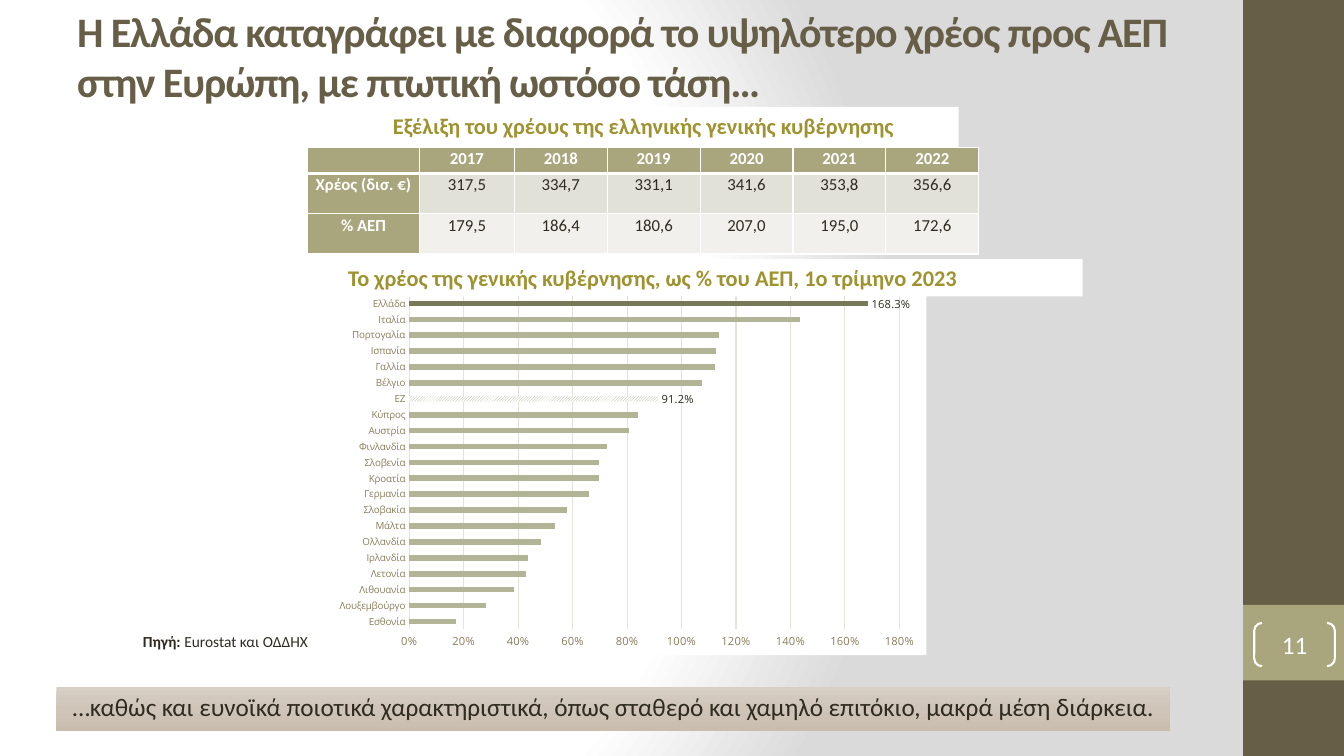
from lxml import etree
from pptx import Presentation
from pptx.chart.data import CategoryChartData
from pptx.dml.color import RGBColor
from pptx.enum.chart import XL_CHART_TYPE, XL_LABEL_POSITION, XL_TICK_MARK
from pptx.enum.dml import MSO_PATTERN
from pptx.enum.shapes import MSO_SHAPE
from pptx.enum.text import MSO_ANCHOR, PP_ALIGN
from pptx.oxml import parse_xml
from pptx.oxml.ns import qn
from pptx.util import Inches, Pt

RECT, BRACKET = MSO_SHAPE.RECTANGLE, MSO_SHAPE.DOUBLE_BRACKET
LEFT, CENTER = PP_ALIGN.LEFT, PP_ALIGN.CENTER
TOP, MIDDLE = MSO_ANCHOR.TOP, MSO_ANCHOR.MIDDLE
BAR, OUTSIDE = XL_CHART_TYPE.BAR_CLUSTERED, XL_LABEL_POSITION.OUTSIDE_END
NO_TICK, HATCH = XL_TICK_MARK.NONE, MSO_PATTERN.DARK_UPWARD_DIAGONAL
WIDTH, HEIGHT = Inches(13.333), Inches(7.5)
A_NS = 'xmlns:a="http://schemas.openxmlformats.org/drawingml/2006/main"'
C_NS = 'xmlns:c="http://schemas.openxmlformats.org/drawingml/2006/chart"'
WHITE, DARK, BROWN, KHAKI, OLIVE = "FFFFFF", "2F2B20", "675E47", "A9A57C", "9E9330"
SAGE, MOSS, TAUPE, GRID = "B1B595", "767A56", "897D5D", "E5E2D9"

YEARS = ["", "2017", "2018", "2019", "2020", "2021", "2022"]
ROWS = [
    YEARS,
    ["Χρέος (δισ. €)", "317,5", "334,7", "331,1", "341,6", "353,8", "356,6"],
    ["% ΑΕΠ", "179,5", "186,4", "180,6", "207,0", "195,0", "172,6"],
]
DEBT = {
    "Εσθονία": 0.172, "Λουξεμβούργο": 0.28, "Λιθουανία": 0.384, "Λετονία": 0.429,
    "Ιρλανδία": 0.435, "Ολλανδία": 0.483, "Μάλτα": 0.536, "Σλοβακία": 0.579,
    "Γερμανία": 0.659, "Κροατία": 0.695, "Σλοβενία": 0.695, "Φινλανδία": 0.725,
    "Αυστρία": 0.806, "Κύπρος": 0.84, "ΕΖ": 0.912, "Βέλγιο": 1.074,
    "Γαλλία": 1.124, "Ισπανία": 1.128, "Πορτογαλία": 1.138, "Ιταλία": 1.435,
    "Ελλάδα": 1.683,
}


def rgb(code):
    return RGBColor.from_string(code)


def place(box):
    """Turn percent shares of the slide into lengths."""
    x, y, w, h = box
    return [int(n * full / 100) for n, full in ((x, WIDTH), (y, HEIGHT), (w, WIDTH), (h, HEIGHT))]


def style(font, size, color, bold=False, face="Calibri"):
    font.size, font.bold, font.name = Pt(size), bold, face
    font.color.rgb = rgb(color)


def write(frame, text, size=18, color=DARK, bold=False, lead="", align=LEFT,
          anchor=TOP, space=None, before=None, after=None, track=0):
    """Fill a frame with one paragraph; lead is a bold opening."""
    frame.word_wrap, frame.vertical_anchor = True, anchor
    par = frame.paragraphs[0]
    par.alignment, par.line_spacing = align, space
    par.space_before, par.space_after = before, after
    for part, heavy in ((lead, True), (text, bold)):
        if part:
            run = par.add_run()
            run.text = part
            style(run.font, size, color, heavy)
            if track:
                run.font._element.set("spc", str(track))
    if not text:
        etree.SubElement(par._p, qn("a:endParaRPr"), sz=str(size * 100))


def blend(fill, root, stops, shade):
    """Set a gradient of (percent, colour) stops; shade is its direction."""
    fill.gradient()
    old = root.find(".//" + qn("a:gradFill"))
    marks = "".join(f'<a:gs pos="{at * 1000}"><a:srgbClr val="{c}"/></a:gs>' for at, c in stops)
    new = parse_xml(f'<a:gradFill {A_NS} rotWithShape="1"><a:gsLst>{marks}</a:gsLst>{shade}</a:gradFill>')
    old.getparent().replace(old, new)


def block(slide, box, fill=None, kind=RECT):
    shape = slide.shapes.add_shape(kind, *place(box))
    shape.shadow.inherit = False
    shape.line.fill.background()
    if fill:
        shape.fill.solid()
        shape.fill.fore_color.rgb = rgb(fill)
    else:
        shape.fill.background()
    return shape


def label(slide, box, text, **form):
    write(slide.shapes.add_textbox(*place(box)).text_frame, text, **form)


def caption(slide, box, text):
    write(block(slide, box, WHITE).text_frame, text, size=16, color=OLIVE, bold=True, align=CENTER)


def margin(slide, box, number):
    """Draw the side band with the page number."""
    x, y, w, h = box
    block(slide, box, BROWN)
    block(slide, (x, y + 0.8 * h, w, 0.1 * h), KHAKI)
    pair = block(slide, (x + 0.11 * w, y + 0.824 * h, 0.8 * w, 0.0573 * h), kind=BRACKET)
    pair.adjustments[0] = 0.18
    pair.line.color.rgb, pair.line.width = rgb(WHITE), Pt(1.5)
    frame = pair.text_frame
    frame.margin_left = frame.margin_right = frame.margin_top = frame.margin_bottom = 0
    write(frame, number, color=WHITE, align=CENTER, anchor=MIDDLE)


def edge(cell, side, width):
    props = cell._tc.get_or_add_tcPr()
    props.append(parse_xml(
        f'<a:ln{side} {A_NS} w="{Pt(width)}"><a:solidFill><a:srgbClr val="{WHITE}"/></a:solidFill></a:ln{side}>'))


def table(slide, box):
    spot = place(box)
    grid = slide.shapes.add_table(len(ROWS), len(YEARS), *spot).table
    for col, share in zip(grid.columns, [1.11, 0.94] + [0.92] * 5):
        col.width = int(spot[2] * share / 6.65)
    for row, share in zip(grid.rows, (0.26, 0.4, 0.4)):
        row.height = int(spot[3] * share / 1.06)
    for r, row in enumerate(ROWS):
        for c, text in enumerate(row):
            cell = grid.cell(r, c)
            head = r == 0 or c == 0
            cell.margin_left = cell.margin_right = Inches(0.07)
            cell.margin_top = cell.margin_bottom = 0
            for side, width in (("L", 1), ("R", 1), ("T", 3 if r == 1 else 1), ("B", 1 if r else 3)):
                edge(cell, side, width)
            cell.fill.solid()
            cell.fill.fore_color.rgb = rgb(KHAKI if head else ("E2E1D7", "F1F0EC")[r - 1])
            write(cell.text_frame, text, size=12, color=WHITE if head else DARK,
                  bold=head, align=CENTER, space=1.07, after=Pt(8))


def chart(slide, box):
    data = CategoryChartData(number_format="0.0%")
    data.categories = list(DEBT)
    data.add_series("Χρέος", list(DEBT.values()))
    graph = slide.shapes.add_chart(BAR, *place(box), data).chart
    graph.has_legend = graph.has_title = False
    style(graph.font, 8, DARK, face="Open Sans")

    cats, vals = graph.category_axis, graph.value_axis
    for axis, size in ((cats, 7), (vals, 8)):
        axis.major_tick_mark = axis.minor_tick_mark = NO_TICK
        style(axis.tick_labels.font, size, TAUPE, face="Open Sans")
    cats.has_major_gridlines = False
    vals.has_major_gridlines = True
    for line in (cats.format.line, vals.major_gridlines.format.line):
        line.color.rgb, line.width = rgb(GRID), Pt(0.75)
    vals.format.line.fill.background()
    vals.minimum_scale, vals.maximum_scale, vals.major_unit = 0, 1.8, 0.2
    vals.tick_labels.number_format = "0%"
    vals.tick_labels.number_format_is_linked = False

    plot = graph.plots[0]
    plot.gap_width, plot.vary_by_categories = 182, False
    bars = plot.series[0]
    bars.format.fill.solid()
    bars.format.fill.fore_color.rgb = rgb(SAGE)
    names = list(DEBT)
    zone, greece = (bars.points[names.index(name)] for name in ("ΕΖ", "Ελλάδα"))
    fill = zone.format.fill
    fill.patterned()
    fill.pattern = HATCH
    fill.fore_color.rgb, fill.back_color.rgb = rgb(SAGE), rgb(WHITE)
    greece.format.fill.solid()
    greece.format.fill.fore_color.rgb = rgb(MOSS)
    for point in (zone, greece):
        style(point.data_label.font, 8, DARK, face="Open Sans")
        point.data_label.position = OUTSIDE

    body = graph.element.find(qn("c:chart"))
    body.addnext(parse_xml(
        f'<c:spPr {C_NS} {A_NS}><a:solidFill><a:srgbClr val="{WHITE}"/></a:solidFill>'
        '<a:ln><a:noFill/></a:ln></c:spPr>'))
    area = body.find(qn("c:plotArea"))
    for old in area.findall(qn("c:layout")):
        area.remove(old)
    sizes = "".join(f'<c:{k} val="{v}"/>' for k, v in
                    (("x", 0.135), ("y", 0.02), ("w", 0.82), ("h", 0.91)))
    area.insert(0, parse_xml(
        f'<c:layout {C_NS}><c:manualLayout><c:layoutTarget val="inner"/>'
        f'<c:xMode val="edge"/><c:yMode val="edge"/>{sizes}</c:manualLayout></c:layout>'))


def banner(slide, box, text):
    bar = block(slide, box)
    blend(bar.fill, bar.element, [(0, "D7CEC4"), (50, "CEC4B8"), (100, "C9BDAD")],
          '<a:lin ang="5400000" scaled="0"/>')
    write(bar.text_frame, text, align=CENTER, anchor=MIDDLE, space=0.8, before=Pt(3), after=Pt(3))


def main():
    deck = Presentation()
    deck.slide_width, deck.slide_height = WIDTH, HEIGHT
    slide = deck.slides.add_slide(deck.slide_layouts[6])
    blend(slide.background.fill, slide.element, [(0, WHITE), (75, WHITE), (100, "DADADA")],
          '<a:path path="circle"><a:fillToRect l="20000" t="50000" r="100000" b="50000"/></a:path>')
    margin(slide, (92.5, 0, 7.5, 100), "11")
    label(slide, (5, 0.67, 83.33, 13.47),
          "Η Ελλάδα καταγράφει με διαφορά το υψηλότερο χρέος προς ΑΕΠ στην Ευρώπη, με πτωτική ωστόσο τάση…",
          size=30, color=BROWN, bold=True, anchor=MIDDLE, track=-80)
    label(slide, (9.9, 82.93, 83.4, 3.87), "Eurostat και ΟΔΔΗΧ", lead="Πηγή: ", size=11)
    table(slide, (22.88, 19.47, 49.95, 14.13))
    caption(slide, (24.45, 14.13, 46.88, 5.33), "Εξέλιξη του χρέους της ελληνικής γενικής κυβέρνησης")
    banner(slide, (4.2, 90.93, 82.88, 5.73),
           "…καθώς και ευνοϊκά ποιοτικά χαρακτηριστικά, όπως σταθερό και χαμηλό επιτόκιο, μακρά μέση διάρκεια.")
    chart(slide, (24.45, 38.13, 44.48, 48.53))
    caption(slide, (16.58, 34.27, 63.98, 4.93), "Το χρέος της γενικής κυβέρνησης, ως % του ΑΕΠ, 1ο τρίμηνο 2023")
    deck.save("out.pptx")


if __name__ == "__main__":
    main()
